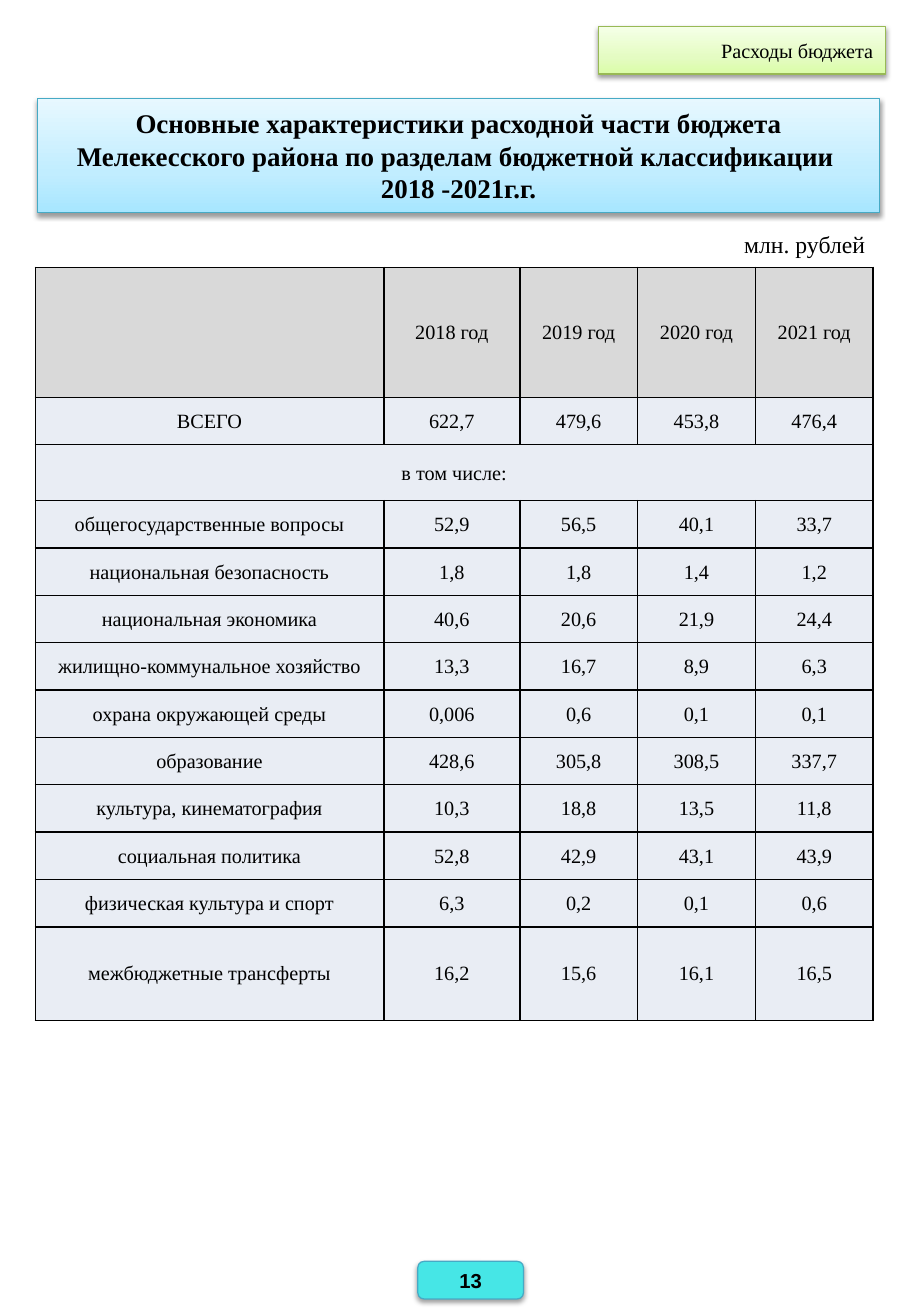
import copy

import lxml.etree
import pptx
import pptx.dml.color
import pptx.enum.shapes
import pptx.enum.text
import pptx.oxml
import pptx.oxml.ns
import pptx.util

Inches = pptx.util.Inches
Pt = pptx.util.Pt
Align = pptx.enum.text.PP_ALIGN
Middle = pptx.enum.text.MSO_ANCHOR.MIDDLE
Shapes = pptx.enum.shapes.MSO_SHAPE
rgb = pptx.dml.color.RGBColor.from_string
qn = pptx.oxml.ns.qn
namespace = pptx.oxml.ns.nsdecls("a")


def write(frame, text, size, align, font="Times New Roman", bold=False):
    frame.text = text
    frame.word_wrap = True
    for para in frame.paragraphs:
        para.alignment = align
        for span in para.runs:
            span.font.name = font
            span.font.size = Pt(size)
            span.font.bold = bold
            span.font.color.rgb = rgb("000000")


def decorate(shape, line, colors):
    if len(colors) == 1:
        shape.fill.solid()
        shape.fill.fore_color.rgb = rgb(colors[0])
    else:
        shape.fill.gradient()
        shape.fill.gradient_angle = 90
        stop_list = shape._element.spPr.find(".//" + qn("a:gsLst"))
        stop_list.insert(1, copy.deepcopy(stop_list[0]))
        for stop, position, color in zip(shape.fill.gradient_stops, (0, 0.35, 1), colors):
            stop.position = position
            stop.color.rgb = rgb(color)
    shape.line.color.rgb = rgb(line)
    shape.line.width = Pt(0.75)
    shape.shadow.inherit = False
    shape._element.spPr.find(qn("a:effectLst")).append(pptx.oxml.parse_xml(
        f'<a:outerShdw {namespace} blurRad="{Pt(3.1)}" dist="{Pt(1.6)}" dir="5400000" rotWithShape="0">'
        '<a:srgbClr val="000000"><a:alpha val="38000"/></a:srgbClr></a:outerShdw>'))
    shape.text_frame.vertical_anchor = Middle


deck = pptx.Presentation()
deck.slide_width = Inches(7.5)
deck.slide_height = Inches(10.83)
page = deck.slides.add_slide(deck.slide_layouts[5])

title = page.shapes.title
title.left, title.top, title.width, title.height = map(Inches, (0.31, 0.81, 6.93, 0.94))
decorate(title, "46AAC5", ["A7E6FF", "C1EDFF", "E7F8FF"])
title.text_frame.auto_size = pptx.enum.text.MSO_AUTO_SIZE.NONE
write(title.text_frame,
      "Основные характеристики расходной части бюджета Мелекесского района "
      "по разделам бюджетной классификации \n2018 -2021г.г.",
      16, Align.CENTER, bold=True)

page_badge = page.shapes.add_shape(
    Shapes.FLOWCHART_ALTERNATE_PROCESS, Inches(3.44), Inches(10.38), Inches(0.87), Inches(0.31))
decorate(page_badge, "46AAC5", ["46E6E6"])
write(page_badge.text_frame, "13", 12, Align.CENTER, font="Arial", bold=True)

section_tag = page.shapes.add_shape(
    Shapes.RECTANGLE, Inches(4.93), Inches(0.22), Inches(2.36), Inches(0.39))
decorate(section_tag, "98B955", ["DAFDA7", "E4FCC2", "F5FFE7"])
write(section_tag.text_frame, "Расходы бюджета", 12, Align.RIGHT)

unit_box = page.shapes.add_textbox(Inches(5.8), Inches(1.84), Inches(1.42), Inches(0.34))
write(unit_box.text_frame, "млн. рублей", 14, Align.RIGHT)

budget_rows = [
    ("", "2018 год", "2019 год", "2020 год", "2021 год"),
    ("ВСЕГО", "622,7", "479,6", "453,8", "476,4"),
    ("в том числе:", "", "", "", ""),
    ("общегосударственные вопросы", "52,9", "56,5", "40,1", "33,7"),
    ("национальная безопасность", "1,8", "1,8", "1,4", "1,2"),
    ("национальная экономика", "40,6", "20,6", "21,9", "24,4"),
    ("жилищно-коммунальное хозяйство", "13,3", "16,7", "8,9", "6,3"),
    ("охрана окружающей среды", "0,006", "0,6", "0,1", "0,1"),
    ("образование", "428,6", "305,8", "308,5", "337,7"),
    ("культура, кинематография", "10,3", "18,8", "13,5", "11,8"),
    ("социальная политика", "52,8", "42,9", "43,1", "43,9"),
    ("физическая культура и спорт", "6,3", "0,2", "0,1", "0,6"),
    ("межбюджетные трансферты", "16,2", "15,6", "16,1", "16,5"),
]
column_widths = [2.87, 1.12] + [0.97] * 3
row_heights = [1.07, 0.39, 0.46] + [0.39] * 9 + [0.77]

table = page.shapes.add_table(
    len(budget_rows), len(column_widths), Inches(0.29), Inches(2.2),
    Inches(sum(column_widths)), Inches(sum(row_heights))).table
table.first_row = False
table.horz_banding = False
for column, width in zip(table.columns, column_widths):
    column.width = Inches(width)
for row, height in zip(table.rows, row_heights):
    row.height = Inches(height)

for row_index, values in enumerate(budget_rows):
    for column_index, value in enumerate(values):
        cell = table.cell(row_index, column_index)
        write(cell.text_frame, value, 12, Align.CENTER)
        cell.vertical_anchor = Middle
        cell.margin_left = cell.margin_right = cell.margin_top = Inches(0.01)
        cell.margin_bottom = 0
        for side in ("lnL", "lnR", "lnT", "lnB"):
            cell._tc.get_or_add_tcPr().append(pptx.oxml.parse_xml(
                f'<a:{side} {namespace} w="{Pt(1)}"><a:solidFill>'
                f'<a:srgbClr val="000000"/></a:solidFill></a:{side}>'))
        cell.fill.solid()
        cell.fill.fore_color.rgb = rgb("D9D9D9" if row_index == 0 else "E9EDF4")
table.cell(2, 0).merge(table.cell(2, 4))

deck.save("out.pptx")
